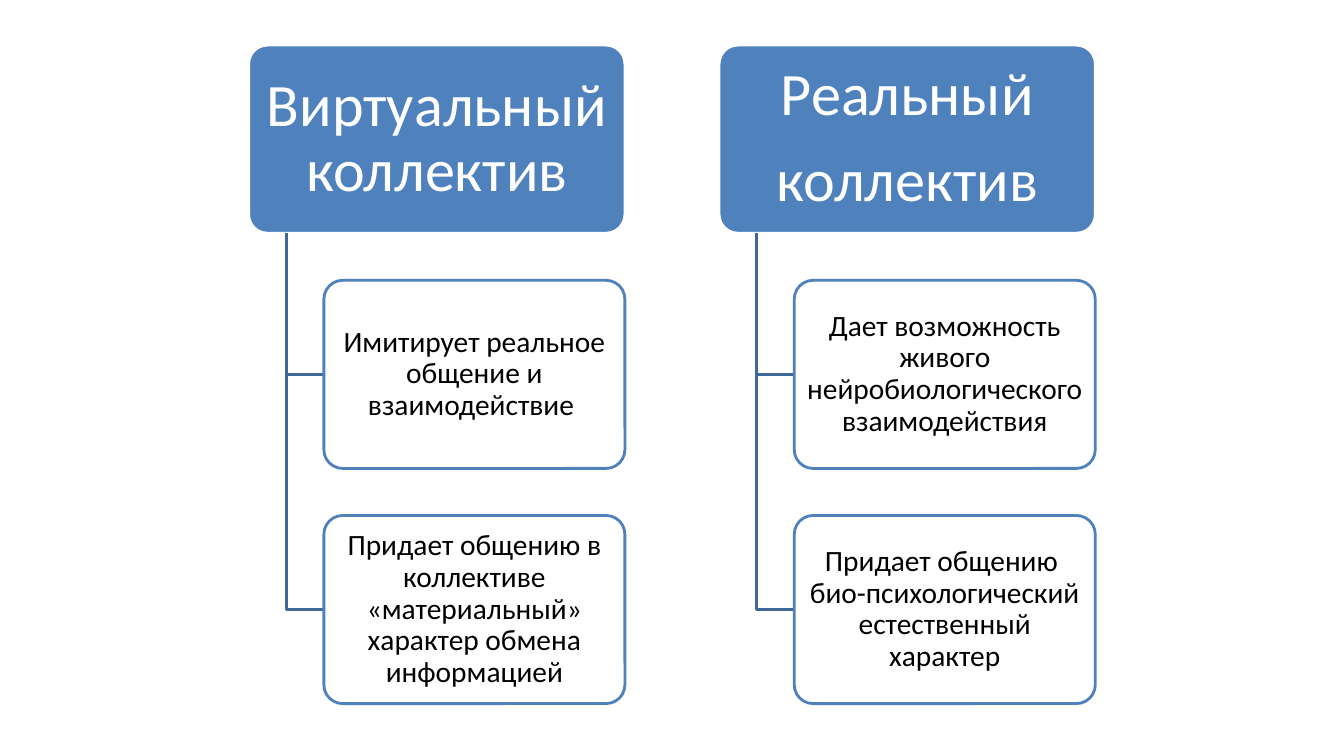
from pptx import Presentation
from pptx.dml.color import RGBColor
from pptx.enum.shapes import MSO_SHAPE
from pptx.enum.text import MSO_ANCHOR, PP_ALIGN
from pptx.util import Pt

BLUE = RGBColor(0x4F, 0x81, 0xBD)
DARK_BLUE = RGBColor(0x3F, 0x67, 0x97)
WHITE = RGBColor(0xFF, 0xFF, 0xFF)
BLACK = RGBColor(0, 0, 0)

# Layout of the two trees, in points
LEFT, TOP = 177.6, 32.2
COLUMN_STEP, ROW_STEP = 336, 168
HEAD_WIDTH, BOX_HEIGHT = 268.8, 134.4
STEM_INDENT = HEAD_WIDTH / 10
ITEM_INDENT = HEAD_WIDTH / 5
ITEM_WIDTH = HEAD_WIDTH - ITEM_INDENT

TREES = [
    (["Виртуальный коллектив"],
     ["Имитирует реальное общение и взаимодействие ",
      "Придает общению в коллективе «материальный» характер обмена информацией"]),
    (["Реальный", "коллектив"],
     ["Дает возможность живого нейробиологического взаимодействия",
      "Придает общению  био-психологический естественный характер"]),
]


class Diagram:
    font_name = "Calibri"
    line_width = Pt(2)

    def __init__(self, page):
        self.page = page

    def rounded_box(self, left, top, width, lines, size, fill, border, color, insets):
        box = self.page.shapes.add_shape(
            MSO_SHAPE.ROUNDED_RECTANGLE, Pt(left), Pt(top), Pt(width), Pt(BOX_HEIGHT))
        box.adjustments[0] = 0.1
        box.shadow.inherit = False
        box.fill.solid()
        box.fill.fore_color.rgb = fill
        box.line.color.rgb = border
        box.line.width = self.line_width

        frame = box.text_frame
        frame.word_wrap = True
        frame.vertical_anchor = MSO_ANCHOR.MIDDLE
        frame.margin_left = frame.margin_right = Pt(insets[0])
        frame.margin_top = frame.margin_bottom = Pt(insets[1])
        frame.text = "\n".join(lines)
        for para in frame.paragraphs:
            para.alignment = PP_ALIGN.CENTER
            para.line_spacing = 0.9
            para.space_after = Pt(round(size * 0.35))
            para.font.name = self.font_name
            para.font.size = Pt(size)
            para.font.color.rgb = color

    def head(self, left, top, lines):
        self.rounded_box(left, top, HEAD_WIDTH, lines, 43, BLUE, WHITE, WHITE, (6.5, 4.3))

    def item(self, left, top, text):
        self.rounded_box(left, top, ITEM_WIDTH, [text], 21, WHITE, BLUE, BLACK, (3, 2))

    def elbow(self, left, top, right, bottom):
        builder = self.page.shapes.build_freeform(Pt(left), Pt(top))
        builder.add_line_segments(
            [(Pt(left), Pt(bottom)), (Pt(right), Pt(bottom))], close=False)
        branch = builder.convert_to_shape()
        branch.shadow.inherit = False
        branch.fill.background()
        branch.line.color.rgb = DARK_BLUE
        branch.line.width = self.line_width


def main():
    deck = Presentation()
    deck.slide_width, deck.slide_height = Pt(960), Pt(540)
    diagram = Diagram(deck.slides.add_slide(deck.slide_layouts[6]))

    for column, (title_lines, items) in enumerate(TREES):
        left = LEFT + column * COLUMN_STEP
        item_left = left + ITEM_INDENT
        diagram.head(left, TOP, title_lines)
        # Each branch runs from the head to the middle of its item
        for row, text in enumerate(items, start=1):
            top = TOP + row * ROW_STEP
            diagram.elbow(left + STEM_INDENT, TOP + BOX_HEIGHT,
                          item_left, top + BOX_HEIGHT / 2)
            diagram.item(item_left, top, text)

    deck.save("out.pptx")


if __name__ == "__main__":
    main()
